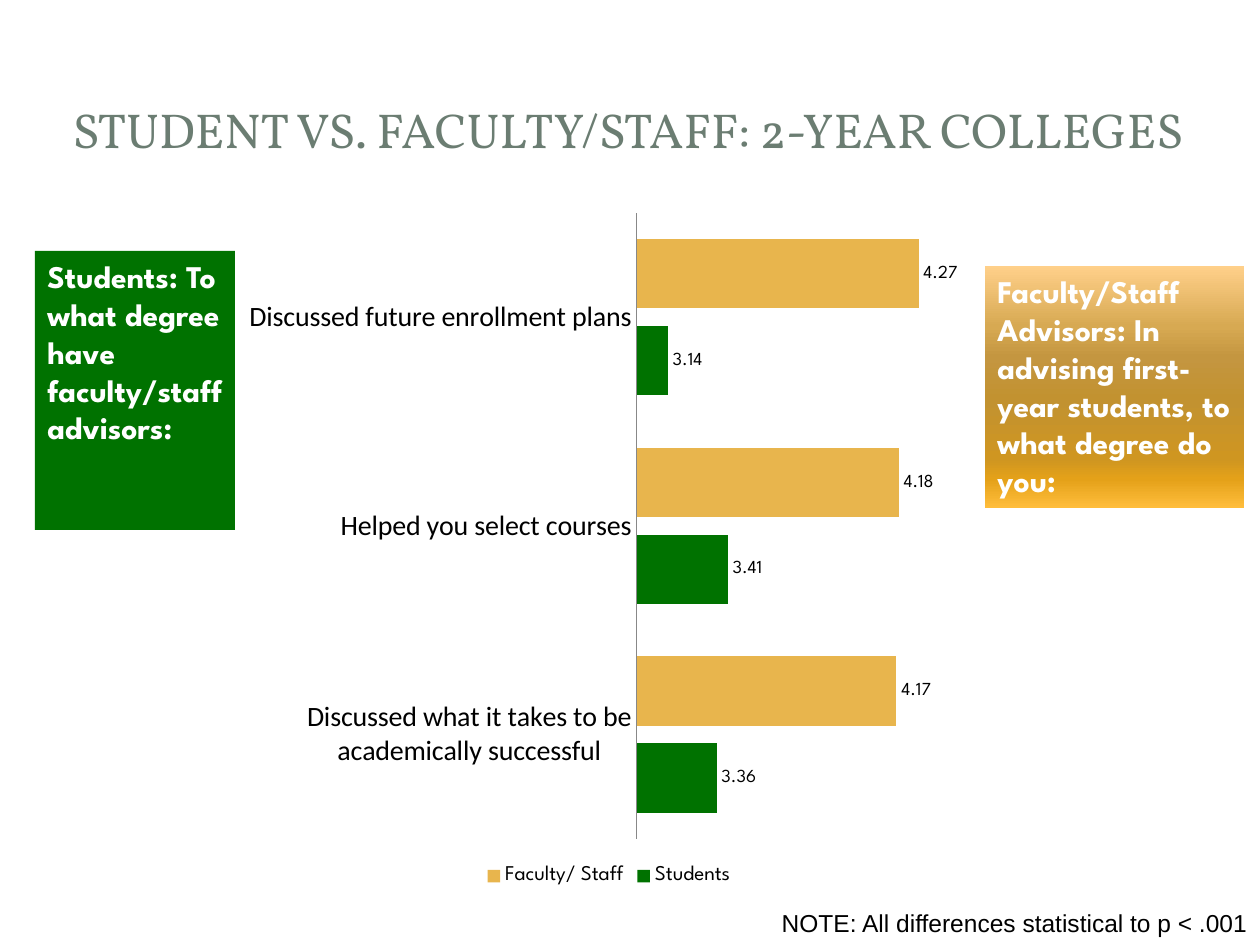
from lxml import etree
from pptx import Presentation
from pptx.chart.data import CategoryChartData
from pptx.dml.color import RGBColor
from pptx.enum.chart import XL_CHART_TYPE as ChartType, XL_LABEL_POSITION as LabelPos
from pptx.enum.chart import XL_LEGEND_POSITION as LegendPos, XL_TICK_MARK as Tick
from pptx.enum.shapes import MSO_SHAPE as Shape
from pptx.enum.text import MSO_ANCHOR as Anchor, PP_ALIGN as Align
from pptx.oxml import parse_xml
from pptx.oxml.ns import nsdecls, qn
from pptx.util import Emu, Pt

PX = 914400 // 126
COLORS = {"title": "6B7D72", "students": "007200", "faculty": "E8B54D",
          "white": "FFFFFF", "black": "000000", "axis": "888888"}
TITLE = "STUDENT VS. FACULTY/STAFF: 2-YEAR COLLEGES"
NOTE = "NOTE: All differences statistical to p < .001"
QUESTIONS = [
    ("Students: To what degree have faculty/staff advisors:", (35, 251, 200, 279)),
    ("Faculty/Staff Advisors: In advising first-year students, to what degree do you:",
     (985, 266, 259, 242)),
]
GOLD_STOPS = [(0, "FFD08A"), (25, "D7A952"), (38, "C49640"), (55, "C29230"),
              (80, "CF9621"), (88, "E4A119"), (100, "FFBD3B")]
TOPICS = ["Discussed what it takes to be academically successful",
          "Helped you select courses", "Discussed future enrollment plans"]
RATINGS = [("Students", "students", (3.36, 3.41, 3.14)),
           ("Faculty/ Staff", "faculty", (4.17, 4.18, 4.27))]
CHART_BOX = (234, 199, 750, 692)
PLOT_BOX = (637, 213, 333, 626)


def rgb(name):
    return RGBColor.from_string(COLORS[name])


def place(box):
    return [Emu(v * PX) for v in box]


def style(font, size, face, color="black", bold=False):
    font.size, font.name, font.bold = Pt(size), face, bold
    font.color.rgb = rgb(color)


def write(shape, text, size, face, color, align, anchor=Anchor.TOP, bold=False):
    frame = shape.text_frame
    frame.word_wrap = True
    frame.vertical_anchor = anchor
    frame.text = text
    line = frame.paragraphs[0]
    line.alignment = align
    style(line.runs[0].font, size, face, color, bold)


def fill_gold(shape):
    stops = "".join(f'<a:gs pos="{pos * 1000}"><a:srgbClr val="{color}"/></a:gs>'
                    for pos, color in GOLD_STOPS)
    gradient = parse_xml(f'<a:gradFill {nsdecls("a")} rotWithShape="1"><a:gsLst>{stops}'
                         '</a:gsLst><a:lin ang="5400000" scaled="0"/></a:gradFill>')
    solid = shape.element.spPr.find(qn("a:solidFill"))
    solid.getparent().replace(solid, gradient)


def fix_plot(chart):
    left, top, width, height = CHART_BOX
    px, py, pw, ph = PLOT_BOX
    plot_area = chart.element.find(".//" + qn("c:plotArea"))
    for old in plot_area.findall(qn("c:layout")):
        plot_area.remove(old)
    layout = etree.Element(qn("c:layout"))
    manual = etree.SubElement(layout, qn("c:manualLayout"))
    settings = [("layoutTarget", "inner"), ("xMode", "edge"), ("yMode", "edge"),
                ("x", round((px - left) / width, 3)), ("y", round((py - top) / height, 3)),
                ("w", round(pw / width, 3)), ("h", round(ph / height, 3))]
    for tag, value in settings:
        etree.SubElement(manual, qn("c:" + tag)).set("val", str(value))
    plot_area.insert(0, layout)


def add_ratings(slide):
    data = CategoryChartData(number_format="0.00")
    data.categories = TOPICS
    for name, _, values in RATINGS:
        data.add_series(name, values)
    chart = slide.shapes.add_chart(ChartType.BAR_CLUSTERED, *place(CHART_BOX), data).chart
    style(chart.font, 10, "League Spartan")
    chart.has_title = False
    chart.has_legend = True
    chart.legend.position = LegendPos.BOTTOM
    chart.legend.include_in_layout = False
    style(chart.legend.font, 12, "League Spartan")

    topics = chart.category_axis
    topics.major_tick_mark = topics.minor_tick_mark = Tick.NONE
    topics.has_major_gridlines = False
    topics.format.line.color.rgb = rgb("axis")
    style(topics.tick_labels.font, 16, "Calibri")
    scale = chart.value_axis
    scale.minimum_scale, scale.maximum_scale = 3, 4.5
    scale.has_major_gridlines = False
    scale.visible = False

    bars = chart.plots[0]
    bars.vary_by_categories = False
    bars.gap_width, bars.overlap = 75, -25
    for series, (_, color, _) in zip(bars.series, RATINGS):
        series.format.fill.solid()
        series.format.fill.fore_color.rgb = rgb(color)
        labels = series.data_labels
        labels.show_value = True
        labels.number_format, labels.number_format_is_linked = "0.00", False
        labels.position = LabelPos.OUTSIDE_END
        style(labels.font, 10.5, "League Spartan")
    fix_plot(chart)


def main():
    deck = Presentation()
    deck.slide_width, deck.slide_height = Emu(1260 * PX), Emu(945 * PX)
    slide = deck.slides.add_slide(deck.slide_layouts[6])
    title = slide.shapes.add_textbox(*place((59, 57, 1138, 143)))
    write(title, TITLE, 28, "Vollkorn", "title", Align.CENTER, Anchor.MIDDLE)
    panels = []
    for question, box in QUESTIONS:
        panel = slide.shapes.add_shape(Shape.RECTANGLE, *place(box))
        panel.shadow.inherit = False
        panel.fill.solid()
        panel.fill.fore_color.rgb = rgb("students")
        panel.line.fill.background()
        write(panel, question, 18, "League Spartan", "white", Align.LEFT, bold=True)
        panels.append(panel)
    fill_gold(panels[1])
    note = slide.shapes.add_textbox(*place((616, 902, 644, 43)))
    write(note, NOTE, 14, "Arial", "black", Align.RIGHT)
    add_ratings(slide)
    deck.save("out.pptx")


if __name__ == "__main__":
    main()
